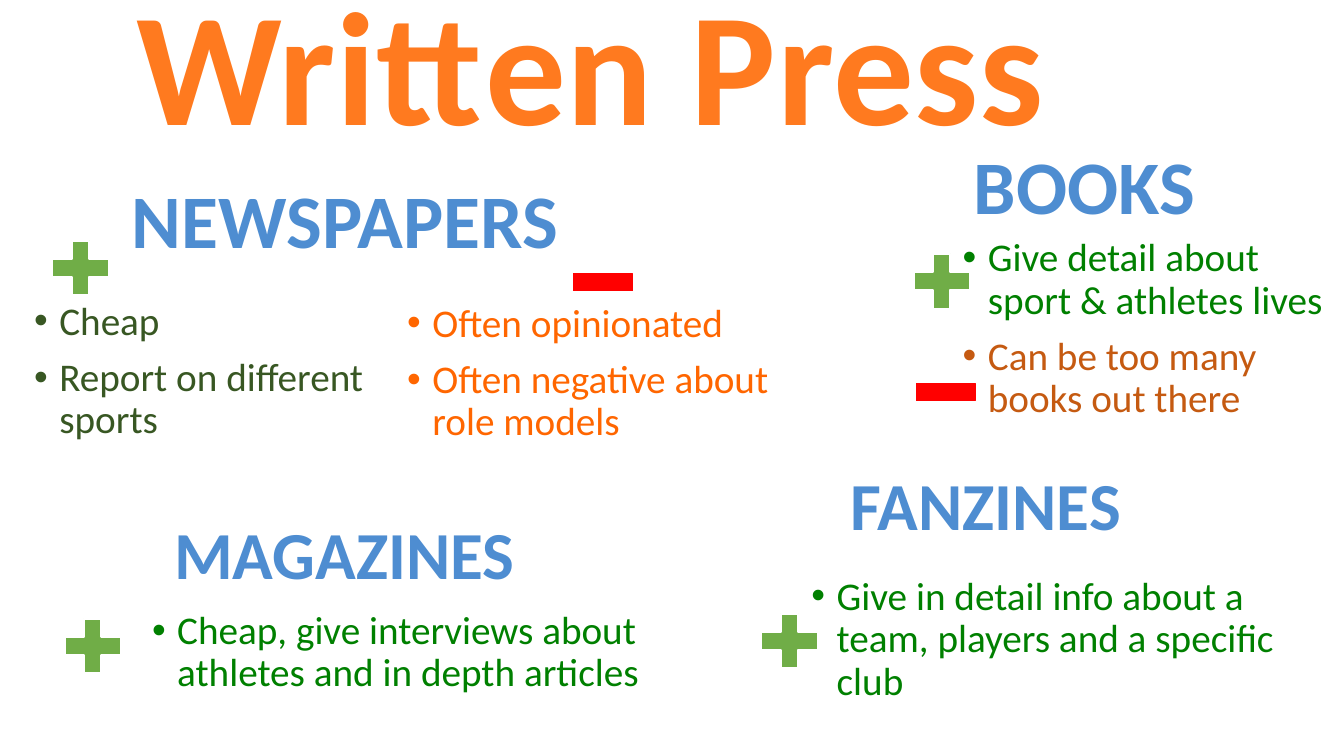
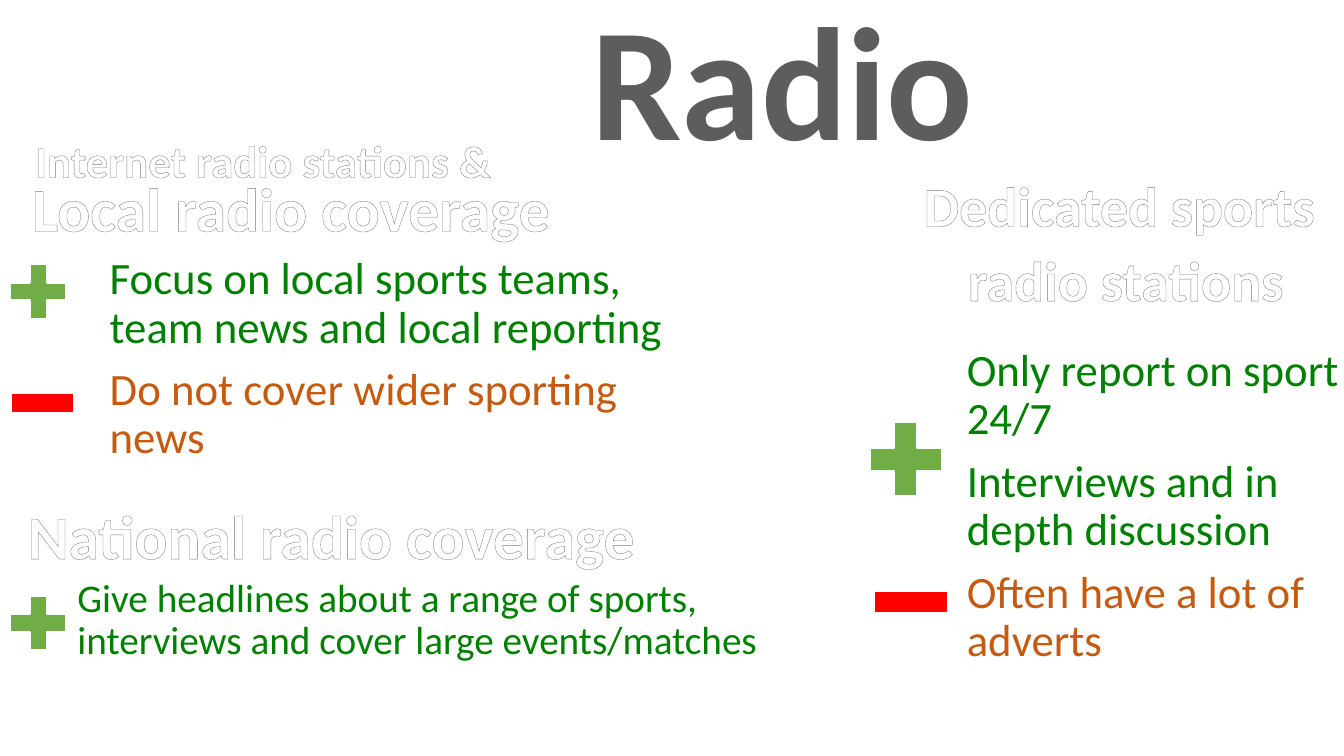
from lxml import etree
from pptx import Presentation
from pptx.dml.color import RGBColor
from pptx.enum.shapes import MSO_SHAPE as Shape
from pptx.enum.text import MSO_ANCHOR as Anchor, MSO_AUTO_SIZE as Fit, PP_ALIGN as Align
from pptx.oxml import parse_xml
from pptx.oxml.ns import nsdecls, qn
from pptx.util import Inches, Pt

# Shared look
FONT = "Calibri"
GREEN, FOREST, ORANGE, RUST = "008000", "385723", "FF6600", "C55A11"
FLAME = [(25, "FF7A1F"), (100, "CA5200")]
BLUE = [(0, "74A3DB"), (49, "4E8DD1"), (50, "3C81C0"), (92, "3A73A7"), (100, "3971A4")]
COAL = [(0, "555555"), (49, "5D5D5D"), (50, "000000"), (95, "000000"), (100, "000000")]
STEEL = [(0, "FFFFFF"), (9, "FFFFFF"), (50, "7F7F7F"), (79, "FFFFFF"), (100, "FFFFFF")]
MARKS = {
    "+": dict(kind=Shape.MATH_PLUS, size=(0.76, 0.74), fill="70AD47", edge="FFFFFF", line=1.5),
    "-": dict(kind=Shape.MATH_MINUS, size=(0.8, 0.72), fill="FF0000", edge="FF0000", line=0.5),
}

# Content: heads are (box, size, lines), lists are (box, size, (text, colour) pairs),
# marks are (sign, left, top) and, where it differs, the size
PRESS = dict(
    title="Written Press", place=(1.25, 0, 11.5, 1.45),
    look=dict(color=FLAME, gap=0.5),
    style=dict(color=BLUE),
    bullet=True,
    heads=[
        ((1.21, 1.77, 4.66, 2.59), 54, ["NEWSPAPERS"]),
        ((9.56, 1.43, 3.04, 2.59), 54, ["BOOKS"]),
        ((8.34, 4.64, 3.04, 2.59), 48, ["FANZINES"]),
        ((1.63, 5.12, 4.64, 2.59), 48, ["MAGAZINES"]),
    ],
    lists=[
        ((0.24, 2.94, 3.88, 2.59), 28,
         [("Cheap", FOREST), ("Report on different sports", FOREST)]),
        ((3.94, 2.96, 3.88, 2.59), 28,
         [("Often opinionated", ORANGE), ("Often negative about role models", ORANGE)]),
        ((9.45, 2.31, 3.88, 2.59), 28,
         [("Give detail about sport & athletes lives", GREEN),
          ("Can be too many books out there", RUST)]),
        ((1.41, 6.01, 5.87, 2.59), 28,
         [("Cheap, give interviews about athletes and in depth articles", GREEN)]),
        ((7.95, 5.67, 5.38, 2.59), 28,
         [("Give in detail info about a team, players and a specific club", GREEN)]),
    ],
    marks=[("+", 0.42, 2.29), ("-", 5.58, 2.44), ("+", 8.96, 2.42),
           ("-", 8.98, 3.53), ("+", 0.54, 6.04), ("+", 7.45, 5.99)],
)
RADIO = dict(
    title=" Radio", place=(1.83, 0.15, 11.5, 1.45),
    look=dict(color=COAL, edge=("FFFFFF", 1.4), align=Align.CENTER),
    style=dict(color=STEEL, edge=("7D7D7D", 0.83)),
    bullet=False,
    heads=[
        ((0.22, 1.72, 5.56, 0.95), 44, ["Local radio coverage"]),
        ((0.18, 4.97, 6.53, 0.81), 44, ["National radio coverage"]),
        ((0.25, 1.33, 6.02, 0.92), 32, ["Internet radio stations &"]),
        ((8.41, 1.72, 5.51, 2.47), 40, ["Dedicated sports ", "radio stations"]),
    ],
    lists=[
        ((0.99, 2.49, 5.83, 2.59), 32,
         [("Focus on local sports teams, team news and local reporting", GREEN),
          ("Do not cover wider sporting news", RUST)]),
        ((0.67, 5.69, 8.04, 2.59), 28,
         [("Give headlines about a range of sports, interviews and cover large events/matches",
           GREEN)]),
        ((9.49, 3.4, 4.38, 2.59), 32,
         [("Only report on sport 24/7", GREEN), ("Interviews and in depth discussion", GREEN),
          ("Often have a lot of adverts", RUST)]),
    ],
    marks=[("+", 0, 2.52), ("-", 0.02, 3.64), ("+", 0, 5.81),
           ("+", 8.5, 4.06, (0.97, 0.99)), ("-", 8.56, 5.58, (0.95, 0.78))],
)


def rgb(code):
    return RGBColor.from_string(code)


def solid(code):
    return f'<a:solidFill><a:srgbClr val="{code}"/></a:solidFill>'


def blend(stops):
    """Top-to-bottom gradient fill."""
    marks = "".join(f'<a:gs pos="{at * 1000}"><a:srgbClr val="{code}"/></a:gs>'
                    for at, code in stops)
    return parse_xml(f'<a:gradFill {nsdecls("a")}><a:gsLst>{marks}</a:gsLst>'
                     '<a:lin ang="5400000" scaled="0"/></a:gradFill>')


def write(para, text, size, color, bold=False, align=Align.LEFT, before=10,
          gap=None, edge=None, bullet=False):
    """Fill a paragraph; color is a hex string or a list of gradient stops."""
    para.alignment, para.line_spacing, para.space_before = align, 0.9, Pt(before)
    run = para.add_run()
    run.text = text
    font = run.font
    font.name, font.size, font.bold = FONT, Pt(size), bold
    props = run._r.get_or_add_rPr()
    if isinstance(color, str):
        font.color.rgb = rgb(color)
    else:
        props.insert(0, blend(color))
    if edge:
        code, width = edge
        props.insert(0, parse_xml(f'<a:ln {nsdecls("a")} w="{Pt(width)}">{solid(code)}'
                                  '<a:prstDash val="solid"/></a:ln>'))
    if gap:
        props.set("spc", str(int(gap * 100)))
    if bullet:
        form = para._p.get_or_add_pPr()
        form.set("marL", str(Inches(0.25)))
        form.set("indent", str(-Inches(0.25)))
        etree.SubElement(form, qn("a:buFont")).set("typeface", "Arial")
        etree.SubElement(form, qn("a:buChar")).set("char", "•")


def add_text(slide, box, lines):
    """Text box with one paragraph for each dict of text and format."""
    frame = slide.shapes.add_textbox(*map(Inches, box)).text_frame
    frame.word_wrap = True
    for i, line in enumerate(lines):
        write(frame.paragraphs[0] if i == 0 else frame.add_paragraph(), **line)


def add_title(slide, text, place, look):
    title = slide.shapes.title
    title.left, title.top, title.width, title.height = map(Inches, place)
    frame = title.text_frame
    frame.auto_size, frame.vertical_anchor = Fit.NONE, Anchor.MIDDLE
    frame.word_wrap = True
    write(frame.paragraphs[0], text, 115, bold=True, before=0, **look)


def add_mark(slide, sign, left, top, size=None):
    mark = MARKS[sign]
    box = (left, top, *(size or mark["size"]))
    shape = slide.shapes.add_shape(mark["kind"], *map(Inches, box))
    shape.shadow.inherit = False
    shape.fill.solid()
    shape.fill.fore_color.rgb = rgb(mark["fill"])
    shape.line.color.rgb = rgb(mark["edge"])
    shape.line.width = Pt(mark["line"])


def build(deck, page):
    slide = deck.slides.add_slide(deck.slide_layouts[5])
    add_title(slide, page["title"], page["place"], page["look"])
    for box, size, lines in page["heads"]:
        align = Align.CENTER if len(lines) > 1 else Align.LEFT
        add_text(slide, box, [dict(text=text, size=size, bold=True, align=align, **page["style"])
                              for text in lines])
    for box, size, lines in page["lists"]:
        add_text(slide, box, [dict(text=text, size=size, color=color, bullet=page["bullet"])
                              for text, color in lines])
    for mark in page["marks"]:
        add_mark(slide, *mark)


def main():
    deck = Presentation()
    deck.slide_width, deck.slide_height = Inches(13.33), Inches(7.5)
    for page in (PRESS, RADIO):
        build(deck, page)
    deck.save("out.pptx")


if __name__ == "__main__":
    main()
